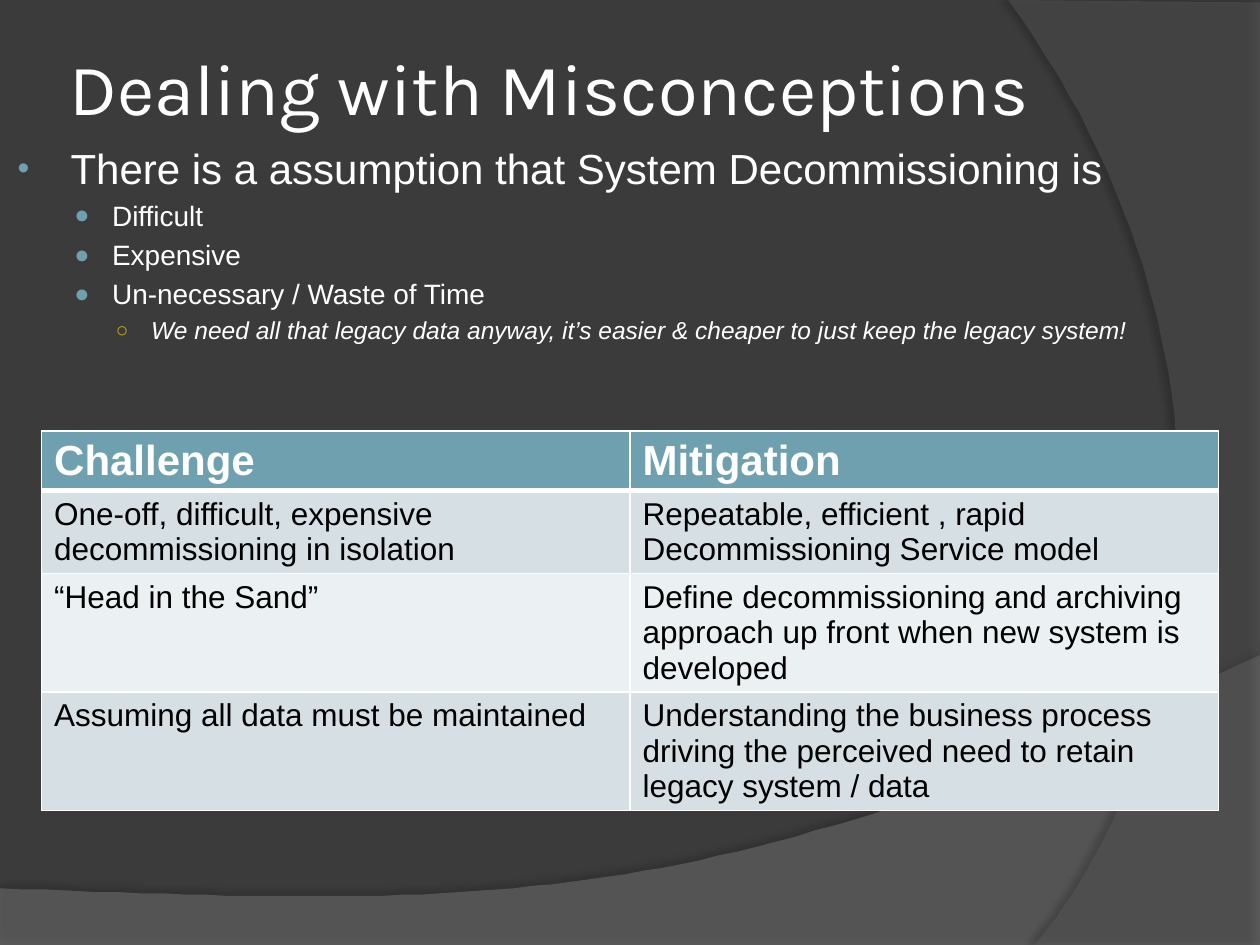
from lxml import etree
from pptx import Presentation
from pptx import util as u
from pptx.dml.color import RGBColor
from pptx.enum import text as t
from pptx.oxml import parse_xml
from pptx.oxml import ns

PX = u.Inches(1) // 100
WHITE = RGBColor(0xFF, 0xFF, 0xFF)
BLACK = RGBColor(0x00, 0x00, 0x00)
CHARCOAL = RGBColor(0x3B, 0x3B, 0x3B)
GREY = RGBColor(0x7F, 0x7F, 0x7F)
DARK_GREY = RGBColor(0x5E, 0x5E, 0x5E)
TEAL = RGBColor(0x6E, 0xA0, 0xB0)
GOLD = RGBColor(0xCC, 0xAF, 0x0A)
BAND = RGBColor(0xD5, 0xDF, 0xE4)
PALE_BAND = RGBColor(0xEB, 0xF0, 0xF2)


def write(para, words, size, color=WHITE, font="Arial", bold=False, italic=False):
    span = para.add_run()
    span.text = words
    span.font.size = u.Pt(size)
    span.font.name = font
    span.font.bold = bold
    span.font.italic = italic
    span.font.color.rgb = color


deck = Presentation()
deck.slide_width = 1000 * PX
deck.slide_height = 750 * PX
page = deck.slides.add_slide(deck.slide_layouts[1])
page.background.fill.solid()
page.background.fill.fore_color.rgb = CHARCOAL
title, body = page.placeholders

SWEEPS = [
    ([(0, 705), (0, 750), (1000, 750), (1000, 520)],
     [(559, 729), (391, 719), (0, 705)], GREY, 45, 35, 3.5, 270),
    ([(800, 0), (1000, 2), (1000, 750), (821, 750)],
     [(935, 619), (1018, 300), (800, 0)], DARK_GREY, 40, 45, 4, 180),
]
STEPS = 60
for corners, bend, color, opacity, shade, distance, angle in SWEEPS:
    points = list(corners[1:])
    controls = [corners[-1], *bend]
    for step in range(1, STEPS + 1):
        f = step / STEPS
        weights = ((1 - f) ** 3, 3 * f * (1 - f) ** 2, 3 * f * f * (1 - f), f ** 3)
        points.append(tuple(
            sum(w * c[axis] for w, c in zip(weights, controls)) for axis in (0, 1)))
    builder = page.shapes.build_freeform(*corners[0], scale=PX)
    builder.add_line_segments(points, close=True)
    sweep = builder.convert_to_shape()
    sweep.fill.solid()
    sweep.fill.fore_color.rgb = color
    sweep.line.fill.background()
    sweep.shadow.inherit = False
    tint = sweep.element.spPr.find(".//" + ns.qn("a:srgbClr"))
    etree.SubElement(tint, ns.qn("a:alpha"), val=str(opacity * 1000))
    sweep.element.spPr.find(ns.qn("a:effectLst")).append(parse_xml(
        f'<a:outerShdw {ns.nsdecls("a")} blurRad="{u.Pt(4)}" dist="{u.Pt(distance)}" '
        f'dir="{angle * 60000}" algn="ctr" rotWithShape="0"><a:srgbClr val="000000">'
        f'<a:alpha val="{shade * 1000}"/></a:srgbClr></a:outerShdw>'))
    title.element.addprevious(sweep.element)

title.left, title.top, title.width, title.height = [n * PX for n in (50, 30, 817, 78)]
frame = title.text_frame
frame.auto_size = t.MSO_AUTO_SIZE.NONE
frame.vertical_anchor = t.MSO_ANCHOR.MIDDLE
frame.margin_left = frame.margin_right = frame.margin_top = frame.margin_bottom = 5 * PX
frame.paragraphs[0].alignment = t.PP_ALIGN.LEFT
write(frame.paragraphs[0], "Dealing with Misconceptions", 41.4, font="Karla")

body.left, body.top, body.width, body.height = [n * PX for n in (0, 108, 1000, 642)]
frame = body.text_frame
frame.auto_size = t.MSO_AUTO_SIZE.NONE
LEVELS = [
    (24, 46, 42, "•", TEAL, 80),
    (16, 79, 30, "●", TEAL, 90),
    (14, 110, 28, "○", GOLD, 85),
]
POINTS = [
    (0, "There is a assumption that System Decommissioning is"),
    (1, "Difficult"),
    (1, "Expensive"),
    (1, "Un-necessary / Waste of Time"),
    (2, "We need all that legacy data anyway, it’s easier & cheaper to just keep "
        "the legacy system!"),
]
for index, (level, words) in enumerate(POINTS):
    para = frame.add_paragraph() if index else frame.paragraphs[0]
    size, margin, hang, mark, color, percent = LEVELS[level]
    para.level = level
    write(para, words, size, italic=level == 2)
    props = para._p.get_or_add_pPr()
    props.set("marL", str(margin * PX))
    props.set("indent", str(-hang * PX))
    bullet_color = etree.SubElement(props, ns.qn("a:buClr"))
    etree.SubElement(bullet_color, ns.qn("a:srgbClr"), val=str(color))
    etree.SubElement(props, ns.qn("a:buSzPct"), val=str(percent * 1000))
    etree.SubElement(props, ns.qn("a:buFont"), typeface="Arial")
    etree.SubElement(props, ns.qn("a:buChar"), char=mark)

ROWS = [
    ("Challenge", "Mitigation"),
    ("One-off, difficult, expensive decommissioning in isolation",
     "Repeatable, efficient , rapid Decommissioning Service model"),
    ("“Head in the Sand”",
     "Define decommissioning and archiving approach up front when new system is developed"),
    ("Assuming all data must be maintained",
     "Understanding the business process driving the perceived need to retain "
     "legacy system / data"),
]
HEIGHTS = [47, 66, 94, 94]
FILLS = [TEAL, BAND, PALE_BAND, BAND]
table = page.shapes.add_table(
    len(ROWS), 2, 33 * PX, 342 * PX, 934 * PX, sum(HEIGHTS) * PX).table
for row, (entries, height) in enumerate(zip(ROWS, HEIGHTS)):
    table.rows[row].height = height * PX
    for column, words in enumerate(entries):
        cell = table.cell(row, column)
        cell.fill.solid()
        cell.fill.fore_color.rgb = FILLS[row]
        para = cell.text_frame.paragraphs[0]
        if row == 0:
            write(para, words, 24, bold=True)
        else:
            write(para, words, 18, color=BLACK)
        thick_side = {0: "B", 1: "T"}.get(row)
        for place, side in enumerate("LRTB"):
            width = u.Pt(3 if side == thick_side else 1)
            cell._tc.tcPr.insert(place, parse_xml(
                f'<a:ln{side} {ns.nsdecls("a")} w="{width}"><a:solidFill>'
                f'<a:srgbClr val="{WHITE}"/></a:solidFill></a:ln{side}>'))

deck.save("out.pptx")
